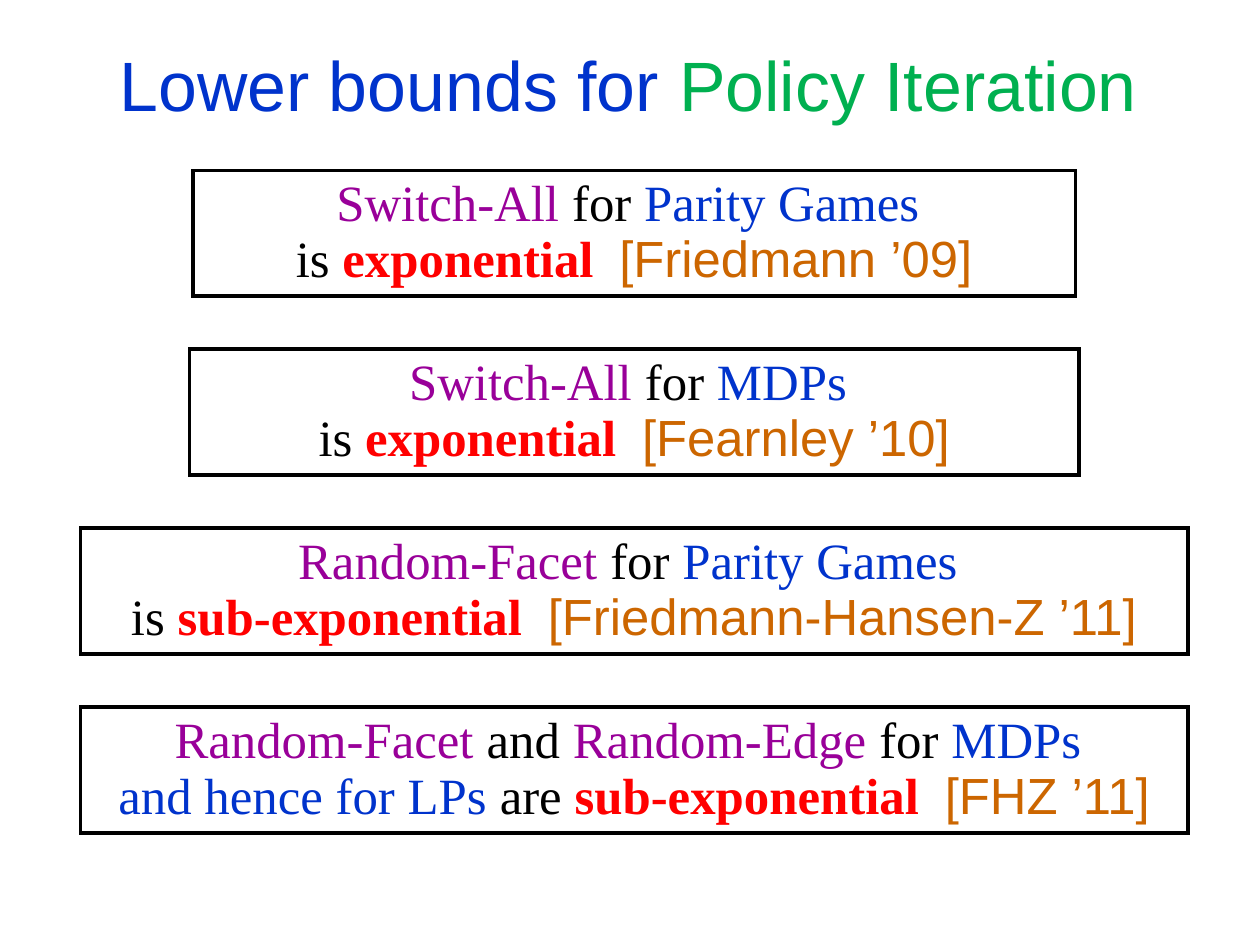
"""Build the slide on lower bounds for policy iteration."""
import lxml.etree
import pptx
import pptx.dml.color
import pptx.enum.shapes
import pptx.enum.text
import pptx.oxml.ns
import pptx.util

Pt = pptx.util.Pt

SLIDE_WIDTH, SLIDE_HEIGHT = 793.75, 595.25
BOX_CENTER, BOX_TOP, BOX_HEIGHT, BOX_PITCH = 399.6, 107.3, 79.2, 112.7
SANS, SERIF = "Arial", "Times New Roman"

TITLE_STYLES = {
    "topic": dict(font=SANS, size=44, color="0033CC"),
    "method": dict(font=SANS, size=44, color="00B050"),
}
BOX_STYLES = {
    "rule": dict(font=SERIF, size=32, color="990099"),
    "plain": dict(font=SERIF, size=32, color="000000"),
    "problem": dict(font=SERIF, size=32, color="0033CC"),
    "bound": dict(font=SERIF, size=32, color="FF0000", bold=True),
    "citation": dict(font=SANS, size=32, color="CC6600"),
}

TITLE = [[("Lower bounds for ", "topic"), ("Policy Iteration", "method")]]
RESULTS = [
    (555.8, [
        [("Switch-All ", "rule"), ("for ", "plain"), ("Parity Games ", "problem")],
        [("is ", "plain"), ("exponential  ", "bound"), ("[Friedmann ’09]", "citation")],
    ]),
    (560.2, [
        [("Switch-All ", "rule"), ("for ", "plain"), ("MDPs ", "problem")],
        [("is ", "plain"), ("exponential  ", "bound"), ("[Fearnley ’10]", "citation")],
    ]),
    (697.7, [
        [("Random-Facet ", "rule"), ("for ", "plain"), ("Parity Games ", "problem")],
        [("is ", "plain"), ("sub-exponential  ", "bound"),
         ("[Friedmann-Hansen-Z ’11]", "citation")],
    ]),
    (697.7, [
        [("Random-Facet ", "rule"), ("and", "plain"), (" Random-Edge ", "rule"),
         ("for ", "plain"), ("MDPs ", "problem")],
        [("and hence for LPs ", "problem"), ("are ", "plain"),
         ("sub-exponential  ", "bound"), ("[FHZ ’11]", "citation")],
    ]),
]


def rgb(color):
    return pptx.dml.color.RGBColor.from_string(color)


def add_text(paragraph, text, *, font, size, color, bold=False):
    run = paragraph.add_run()
    run.text = text
    run.font.name = font
    run.font.size = Pt(size)
    run.font.bold = bold
    run.font.color.rgb = rgb(color)


def write_lines(shape, lines, styles, anchor):
    frame = shape.text_frame
    frame.word_wrap = True
    frame.vertical_anchor = anchor
    paragraph = frame.paragraphs[0]
    paragraph.alignment = pptx.enum.text.PP_ALIGN.CENTER
    paragraph.line_spacing = 0.93
    for index, line in enumerate(lines):
        if index:
            paragraph.add_line_break()
        for text, style in line:
            add_text(paragraph, text, **styles[style])


def add_title(slide):
    title = slide.shapes.title
    title.left, title.top = Pt(-0.9), Pt(17.3)
    title.width, title.height = Pt(SLIDE_WIDTH), Pt(76.3)
    frame = title.text_frame
    frame.margin_left = frame.margin_right = 0
    frame.margin_top = frame.margin_bottom = 0
    write_lines(title, TITLE, TITLE_STYLES, pptx.enum.text.MSO_ANCHOR.MIDDLE)


def add_result(slide, top, width, lines):
    box = slide.shapes.add_shape(
        pptx.enum.shapes.MSO_SHAPE.RECTANGLE,
        Pt(BOX_CENTER - width / 2), Pt(top), Pt(width), Pt(BOX_HEIGHT))
    box.shadow.inherit = False
    box.fill.background()
    box.line.color.rgb = rgb("000000")
    box.line.width = Pt(2.25)
    outline = box.element.spPr.find(pptx.oxml.ns.qn("a:ln"))
    lxml.etree.SubElement(outline, pptx.oxml.ns.qn("a:miter"), lim="800000")
    write_lines(box, lines, BOX_STYLES, pptx.enum.text.MSO_ANCHOR.TOP)


def main():
    presentation = pptx.Presentation()
    presentation.slide_width = Pt(SLIDE_WIDTH)
    presentation.slide_height = Pt(SLIDE_HEIGHT)
    slide_size = presentation.element.find(pptx.oxml.ns.qn("p:sldSz"))
    slide_size.attrib.pop("type", None)
    slide = presentation.slides.add_slide(presentation.slide_layouts[5])
    add_title(slide)
    for index, (width, lines) in enumerate(RESULTS):
        add_result(slide, BOX_TOP + index * BOX_PITCH, width, lines)
    presentation.save("out.pptx")


if __name__ == "__main__":
    main()
